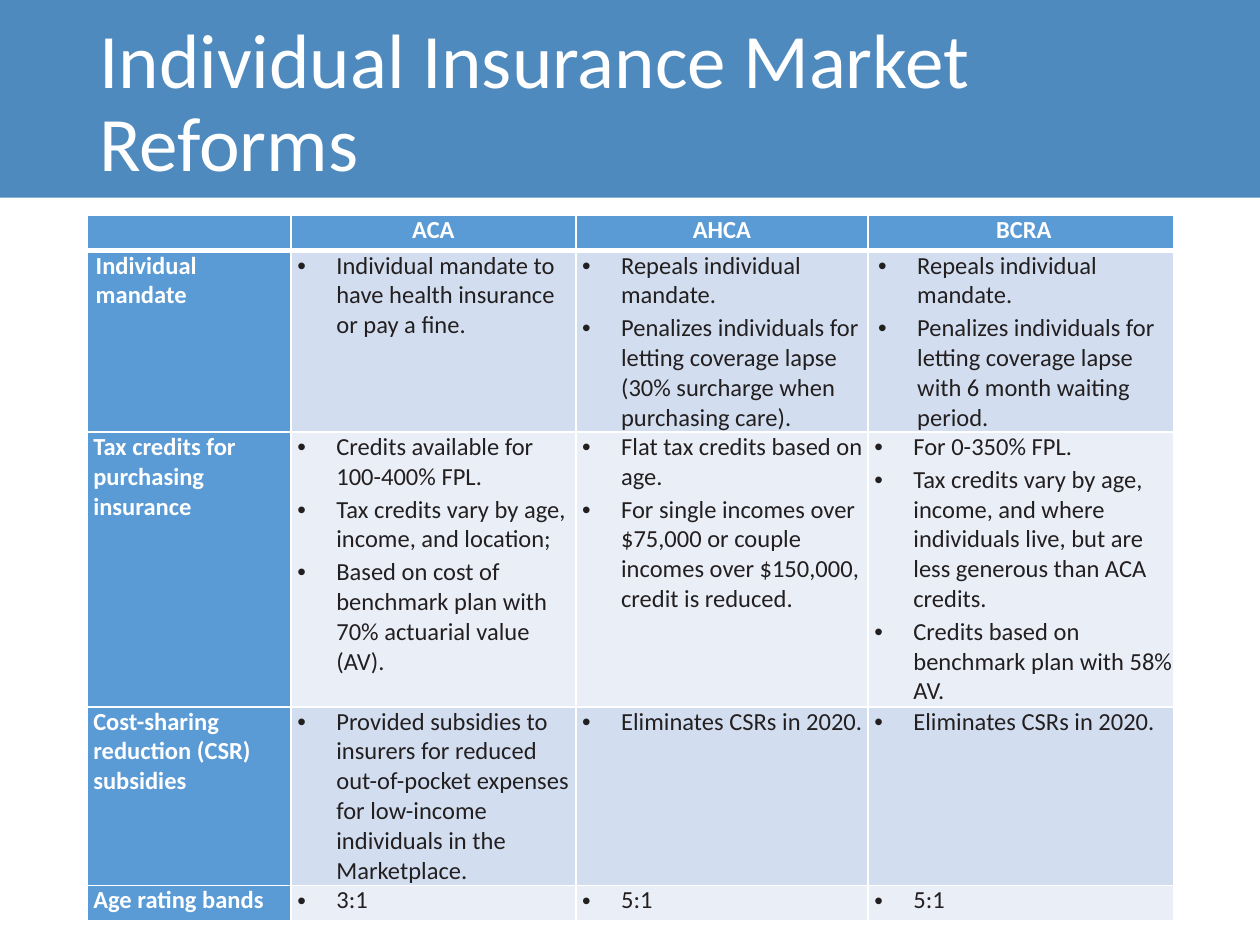
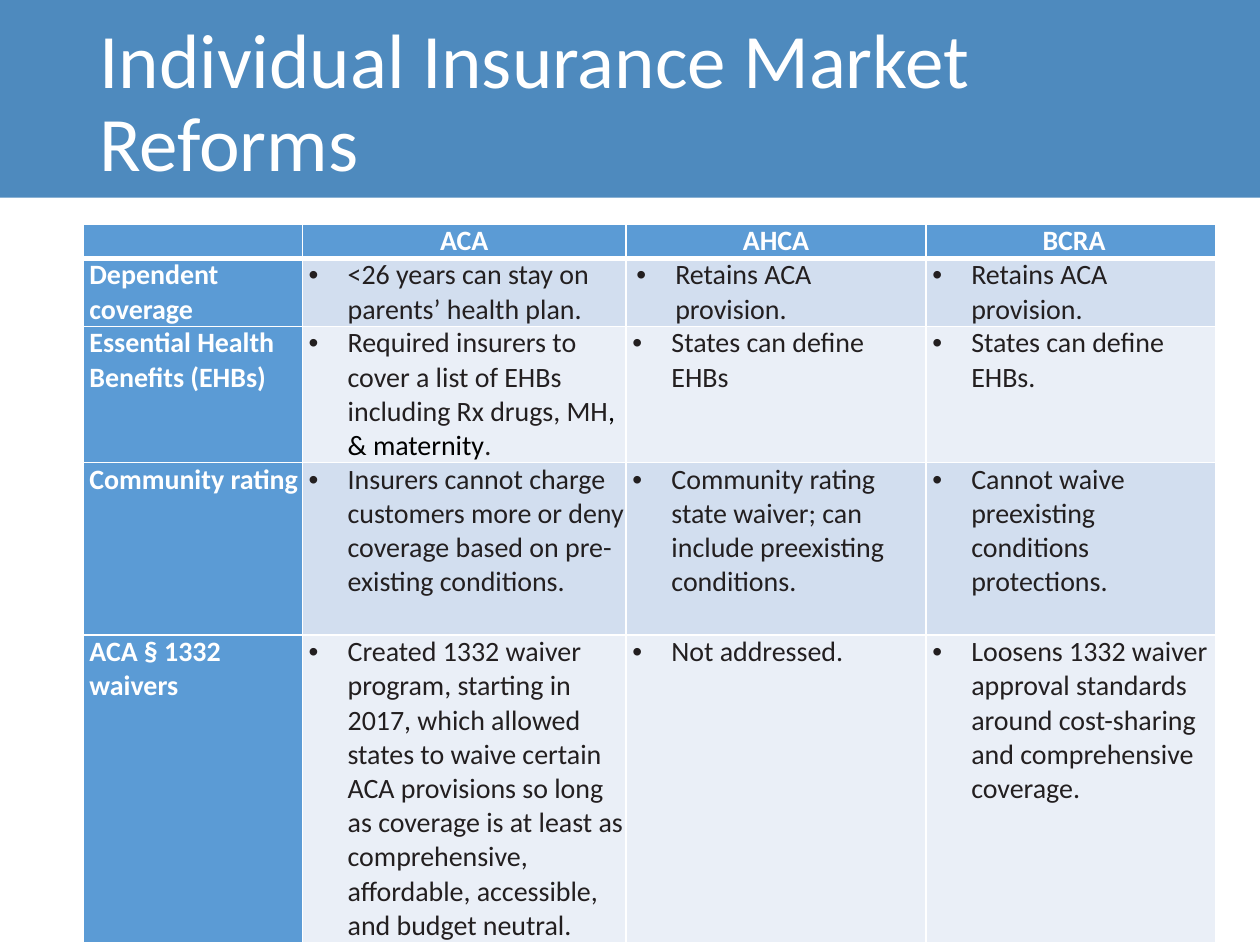
from lxml import etree
from pptx import Presentation
from pptx.dml.color import RGBColor
from pptx.enum.shapes import MSO_SHAPE
from pptx.enum.text import MSO_ANCHOR, PP_ALIGN
from pptx.oxml.ns import qn
from pptx.util import Inches, Pt

RECT = MSO_SHAPE.RECTANGLE
MIDDLE = MSO_ANCHOR.MIDDLE
CENTER = PP_ALIGN.CENTER

FONT = "Calibri"
TITLE = "Individual Insurance Market Reforms"
BAND, HEAD, WHITE, INK, BLACK = "4E8ABE", "5B9BD5", "FFFFFF", "231F20", "000000"
STRIPES = ["D2DEEF", "EAEFF7"]
HEADER = ["", "ACA", "AHCA", " BCRA"]

# Each cell is a list of paragraphs; text between bars is black.
# wide_indent names the (row, column) cells whose bullets sit further in.
SLIDES = [
    {
        "left": 0.69, "top": 1.71, "size": 14,
        "cols": [1.62, 2.26, 2.32, 2.43],
        "heights": [0.28, 1.44, 2.18, 1.42, 0.28],
        "wide_indent": [(1, 3)],
        "inset_label_row": 1,
        "rows": [
            [["Individual mandate"],
             ["Individual mandate to have health insurance or pay a fine."],
             ["Repeals individual mandate.",
              "Penalizes individuals for letting coverage lapse (30% surcharge when purchasing care)."],
             ["Repeals individual mandate.",
              "Penalizes individuals for letting coverage lapse with 6 month waiting period."]],
            [["Tax credits for purchasing insurance"],
             ["Credits available for 100-400% FPL.",
              "Tax credits vary by age, income, and location;",
              "Based on cost of benchmark plan with 70% actuarial value (AV)."],
             ["Flat tax credits based on age.",
              "For single incomes over $75,000 or couple incomes over $150,000, credit is reduced."],
             ["For 0-350% FPL.",
              "Tax credits vary by age, income, and where individuals live, "
              "but are less generous than ACA credits.",
              "Credits based on benchmark plan with 58% AV."]],
            [["Cost-sharing reduction (CSR) subsidies"],
             ["Provided subsidies to insurers for reduced out-of-pocket expenses "
              "for low-income individuals in the Marketplace."],
             ["Eliminates CSRs in 2020."],
             ["Eliminates CSRs in 2020."]],
            [["Age rating bands"], ["3:1"], ["5:1"], ["5:1"]],
        ],
    },
    {
        "left": 0.66, "top": 1.78, "size": 16,
        "cols": [1.74, 2.57, 2.38, 2.3],
        "heights": [0.27, 0.54, 1.08, 1.37, 2.44],
        "wide_indent": [(1, 2)],
        "inset_label_row": None,
        "rows": [
            [["Dependent coverage"],
             ["<26 years can stay on parents’ health plan."],
             ["Retains ACA provision."],
             ["Retains ACA provision."]],
            [["Essential Health", "Benefits (EHBs)"],
             ["Required insurers to cover a list of EHBs including Rx drugs, MH|, & maternity|."],
             ["States can define EHBs"],
             ["States can define EHBs."]],
            [["Community rating"],
             ["Insurers cannot charge customers more or deny coverage based on pre-existing conditions."],
             ["Community rating state waiver; can include preexisting conditions."],
             ["Cannot waive preexisting conditions protections."]],
            [["ACA § 1332 waivers"],
             ["Created 1332 waiver program, starting in 2017, which allowed states to waive "
              "certain ACA provisions so long as coverage is at least as comprehensive, "
              "affordable, accessible, and budget neutral."],
             ["Not addressed."],
             ["Loosens 1332 waiver approval standards around cost-sharing and comprehensive coverage."]],
        ],
    },
]


def rgb(value):
    return RGBColor.from_string(value)


def style_cell(cell, fill, bottom):
    """Set white borders (bottom width in points), fill and zero margins."""
    tcPr = cell._tc.get_or_add_tcPr()
    for side, width in (("L", 1), ("R", 1), ("T", 1), ("B", bottom)):
        ln = etree.SubElement(tcPr, qn("a:ln" + side), w=str(Pt(width)))
        solid = etree.SubElement(ln, qn("a:solidFill"))
        etree.SubElement(solid, qn("a:srgbClr"), val=WHITE)
    cell.fill.solid()
    cell.fill.fore_color.rgb = rgb(fill)
    cell.margin_left = cell.margin_right = 0
    cell.margin_top = cell.margin_bottom = 0


prs = Presentation()
prs.slide_width, prs.slide_height = Inches(10), Inches(7.5)

for content in SLIDES:
    s = prs.slides.add_slide(prs.slide_layouts[6])

    band = s.shapes.add_shape(RECT, 0, 0, Inches(10), Inches(1.57))
    band.shadow.inherit = False
    band.fill.solid()
    band.fill.fore_color.rgb = rgb(BAND)
    band.line.fill.background()

    title = s.shapes.add_textbox(Inches(0.69), Inches(0.11), Inches(9.06), Inches(1.45))
    tf = title.text_frame
    tf.text = TITLE
    tf.word_wrap = True
    tf.vertical_anchor = MIDDLE
    p = tf.paragraphs[0]
    p.line_spacing = 0.9
    font = p.runs[0].font
    font.name, font.size, font.color.rgb = FONT, Pt(44), rgb(WHITE)

    rows = [[[text] for text in HEADER]] + content["rows"]
    table = s.shapes.add_table(
        len(rows), len(HEADER), Inches(content["left"]), Inches(content["top"]),
        Inches(sum(content["cols"])), Inches(sum(content["heights"]))).table
    for column, width in zip(table.columns, content["cols"]):
        column.width = Inches(width)
    for row, height in zip(table.rows, content["heights"]):
        row.height = Inches(height)

    for i, row in enumerate(rows):
        for j, paragraphs in enumerate(row):
            cell = table.cell(i, j)
            is_head, is_label = i == 0, i > 0 and j == 0
            is_body = i > 0 and j > 0
            fill = STRIPES[(i - 1) % 2] if is_body else HEAD
            style_cell(cell, fill, 3 if is_head else 1)
            if is_head:
                cell.margin_left = cell.margin_right = Inches(0.07)
            elif is_label:
                inset = 0.07 if i == content["inset_label_row"] else 0.05
                cell.margin_left = Inches(inset)

            tf = cell.text_frame
            for k, text in enumerate(paragraphs):
                p = tf.paragraphs[0] if k == 0 else tf.add_paragraph()
                if is_head:
                    p.alignment = CENTER
                elif is_body or k == 0:
                    p.space_before = Pt(1.7)
                if is_body:
                    indent = 0.39 if (i, j) in content["wide_indent"] else 0.36
                    pPr = p._p.get_or_add_pPr()
                    pPr.set("marL", str(Inches(indent)))
                    pPr.set("indent", str(Inches(-0.31)))
                    etree.SubElement(pPr, qn("a:buFont"), typeface="Arial")
                    etree.SubElement(pPr, qn("a:buChar"), char="•")
                if not text:
                    etree.SubElement(p._p, qn("a:endParaRPr"), sz=str(content["size"] * 100))
                    continue
                for n, part in enumerate(text.split("|")):
                    r = p.add_run()
                    r.text = part
                    r.font.name, r.font.size = FONT, Pt(content["size"])
                    r.font.bold = not is_body
                    color = (BLACK if n % 2 else INK) if is_body else WHITE
                    r.font.color.rgb = rgb(color)

prs.save("out.pptx")
